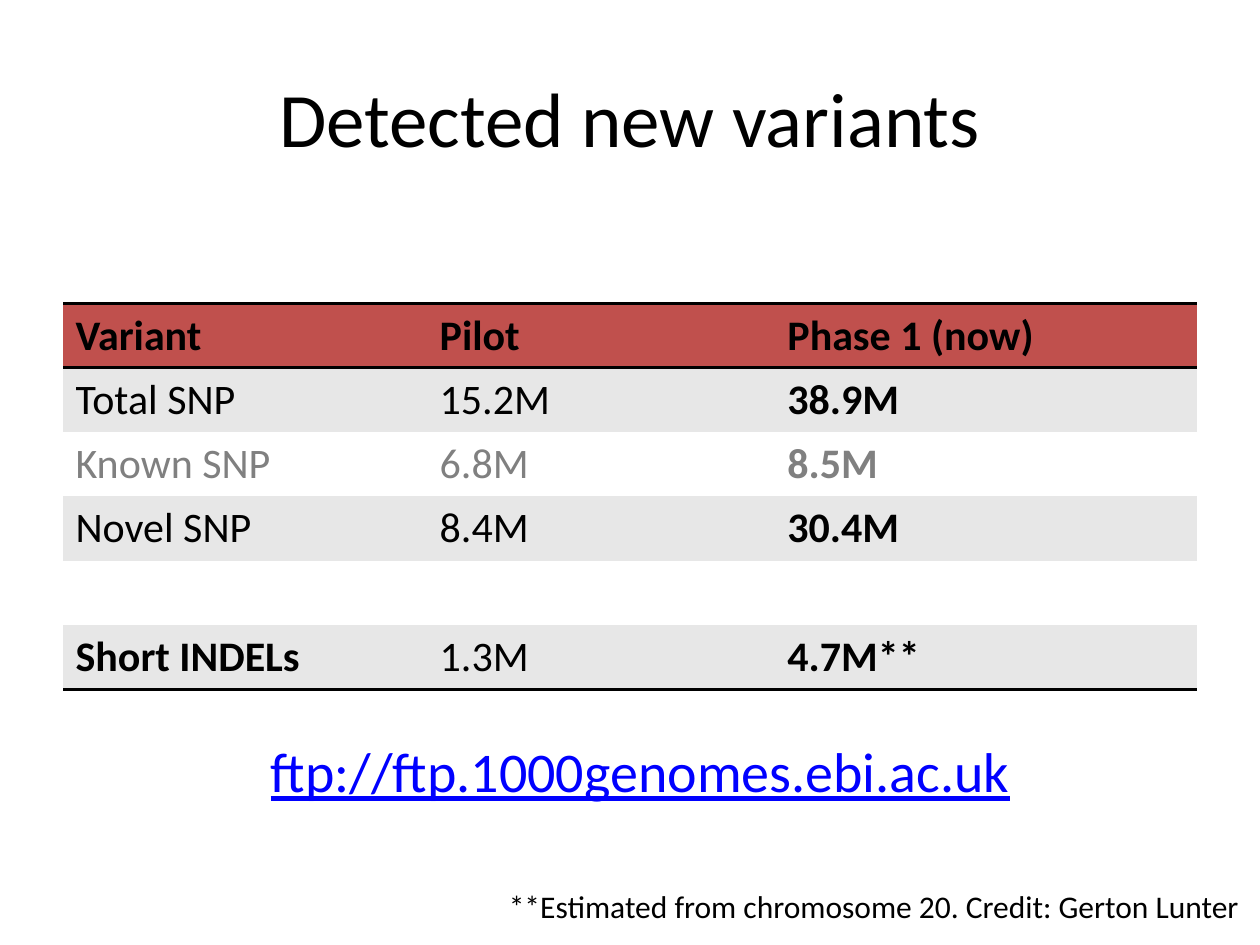
"""Build the slide that lists newly detected variants."""
from lxml.etree import SubElement
from pptx import Presentation
from pptx.dml.color import RGBColor
from pptx.enum.text import MSO_ANCHOR as Anchor, PP_ALIGN as Align
from pptx.oxml import parse_xml
from pptx.oxml.ns import nsdecls, qn
from pptx.util import Inches, Pt

COLORS = {
    "text": "000000",
    "muted": "808080",
    "header": "C0504D",
    "band": "E7E7E7",
    "plain": "FFFFFF",
    "link": "0000FF",
}


def write_text(frame, text, size=24, color="text", bold=False, underline=False,
               align=Align.LEFT, anchor=Anchor.TOP, wrap=True):
    frame.word_wrap = wrap
    frame.vertical_anchor = anchor
    paragraph = frame.paragraphs[0]
    paragraph.alignment = align
    run = paragraph.add_run()
    run.text = text
    run.font.name = "Calibri"
    run.font.size = Pt(size)
    run.font.bold = bold
    run.font.underline = underline
    run.font.color.rgb = RGBColor.from_string(COLORS[color])


def add_border(cell, side):
    border = parse_xml(f'<a:{side} {nsdecls("a")} w="{Pt(2)}"/>')
    fill = SubElement(border, qn("a:solidFill"))
    SubElement(fill, qn("a:srgbClr"), val=COLORS["text"])
    cell._tc.get_or_add_tcPr().insert(0, border)


presentation = Presentation()
presentation.slide_width = Inches(10)
presentation.slide_height = Inches(7.5)
slide = presentation.slides.add_slide(presentation.slide_layouts[6])

title = slide.shapes.add_textbox(Inches(0.5), Inches(0.3), Inches(9), Inches(1.25))
write_text(title.text_frame, "Detected new variants", size=44,
           align=Align.CENTER, anchor=Anchor.MIDDLE)

rows = [
    ("Variant", "Pilot", "Phase 1 (now)"),
    ("Total SNP", "15.2M", "38.9M"),
    ("Known SNP", "6.8M", "8.5M"),
    ("Novel SNP", "8.4M", "30.4M"),
    ("", "", ""),
    ("Short INDELs", "1.3M", "4.7M**"),
]
row_height = Inches(0.51)
table = slide.shapes.add_table(len(rows), 3, Inches(0.5), Inches(2.41),
                               Inches(9), row_height * len(rows)).table
table.first_row = False
table.horz_banding = False
style_id = table._tbl.tblPr.find(qn("a:tableStyleId"))
style_id.text = "{2D5ABB26-0587-4C30-8999-92F81FD0307C}"
for column, width in zip(table.columns, (2.89, 2.76, 3.35)):
    column.width = Inches(width)

last_row = len(rows) - 1
for row_index, values in enumerate(rows):
    table.rows[row_index].height = row_height
    is_header = row_index == 0
    fill = "header" if is_header else "band" if row_index % 2 else "plain"
    color = "muted" if values[0] == "Known SNP" else "text"
    for column_index, value in enumerate(values):
        cell = table.cell(row_index, column_index)
        cell.fill.solid()
        cell.fill.fore_color.rgb = RGBColor.from_string(COLORS[fill])
        cell.vertical_anchor = Anchor.MIDDLE
        if value:
            bold = is_header or column_index == 2 or value == "Short INDELs"
            write_text(cell.text_frame, value, color=color, bold=bold,
                       anchor=None, wrap=None)
        if row_index in (0, last_row):
            add_border(cell, "lnB")
        if is_header:
            add_border(cell, "lnT")

link = slide.shapes.add_textbox(Inches(2.05), Inches(5.8), Inches(6.12), Inches(0.64))
write_text(link.text_frame, "ftp://ftp.1000genomes.ebi.ac.uk", size=32,
           color="link", underline=True, wrap=False)

footnote = slide.shapes.add_textbox(Inches(3.94), Inches(6.99), Inches(6.06), Inches(0.4))
write_text(footnote.text_frame, "**Estimated from chromosome 20. Credit: Gerton Lunter",
           size=18, wrap=False)

presentation.save("out.pptx")
